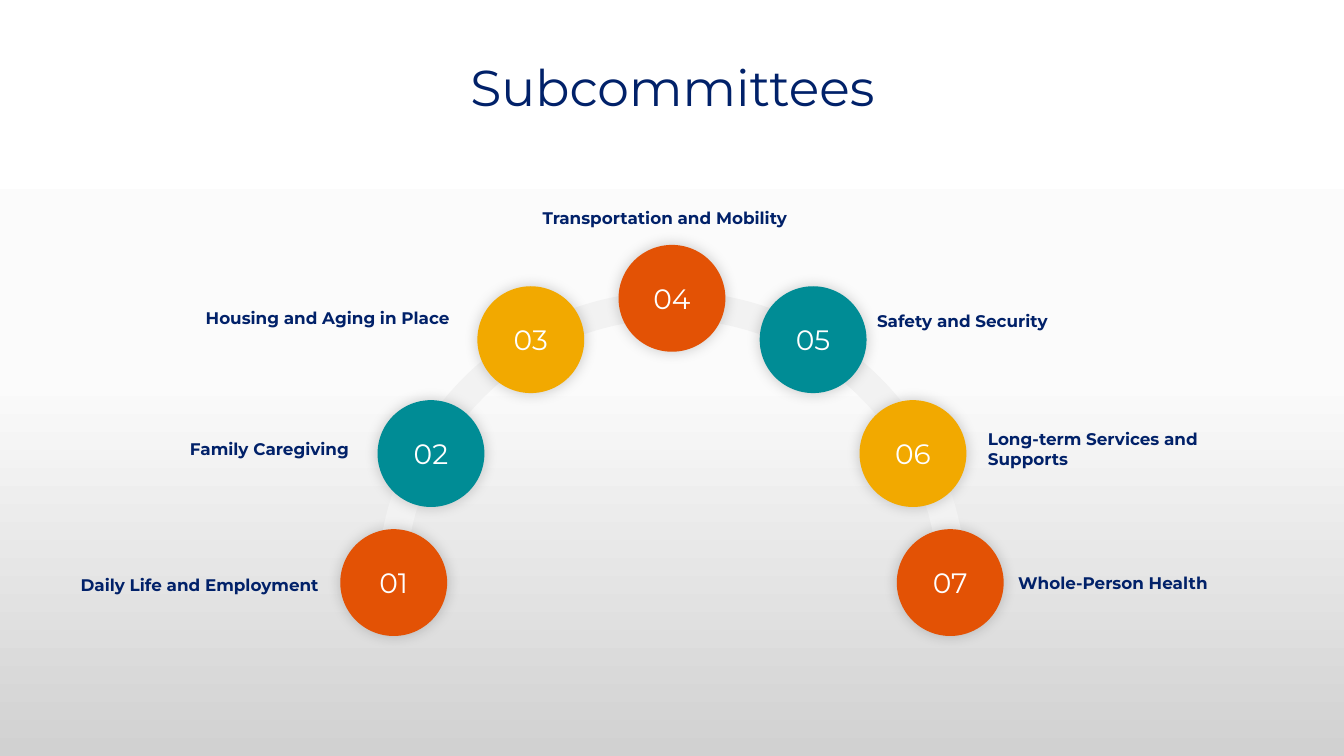
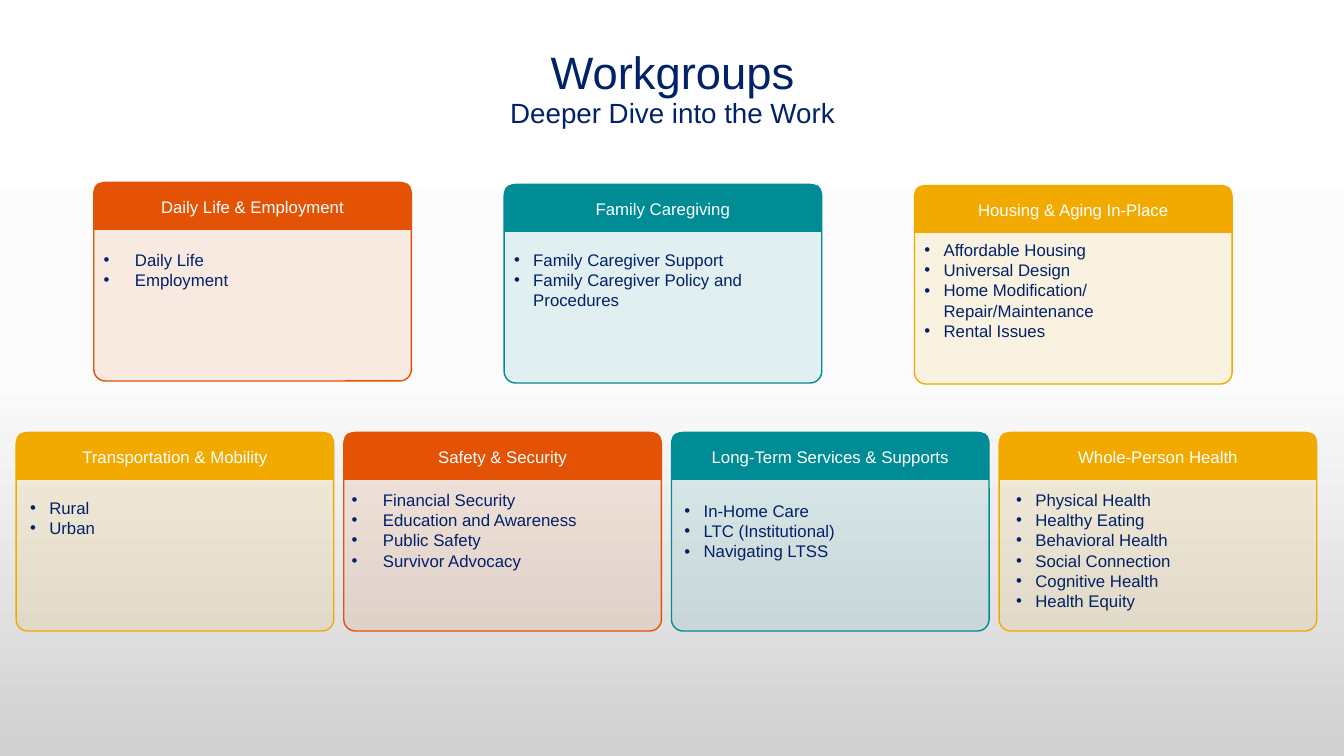
from copy import deepcopy

from lxml import etree
from pptx import Presentation
from pptx.dml.color import RGBColor
from pptx.enum.shapes import MSO_SHAPE
from pptx.enum.text import MSO_ANCHOR, PP_ALIGN
from pptx.oxml.ns import qn
from pptx.util import Inches, Pt

# Shared look; lengths are columns and rows of a one-inch grid
COLUMNS, ROWS = 13.33, 7.5
MIDDLE = COLUMNS / 2
NAVY, WHITE, PALE = "012169", "FFFFFF", "F2F2F2"
ORANGE, TEAL, GOLD = "E35205", "008C95", "F2A900"
BACKDROP = [(0, WHITE), (0.5, "FBFBFB"), (1, "D1D1D1")]
DISPLAY_FONT, BODY_FONT = "Montserrat", "Arial"

# Arch of numbered discs: distance from the middle and top of each pair
DISC = 1.06
ARCH_STEPS = [(2.76, 5.25), (2.39, 3.97), (1.4, 2.84), (0, 2.43)]
ARCH_COLORS = [ORANGE, TEAL, GOLD, ORANGE, TEAL, GOLD, ORANGE]
RING, RING_TOP = 5.56, 3.03
LABEL_WIDTH = 2.71
LABELS = [
    ("Daily Life and Employment", 0.55, 5.65, PP_ALIGN.RIGHT),
    ("Family Caregiving", 0.85, 4.3, PP_ALIGN.RIGHT),
    ("Housing and Aging in Place", 1.85, 3, PP_ALIGN.RIGHT),
    ("Transportation and Mobility", 5.24, 2.01, PP_ALIGN.CENTER),
    ("Safety and Security", 8.6, 3.03, PP_ALIGN.LEFT),
    ("Long-term Services and Supports", 9.7, 4.2, PP_ALIGN.LEFT),
    ("Whole-Person Health", 10, 5.63, PP_ALIGN.LEFT),
]

# Cards: heading, colour, top, list shift (right, down), hanging indent, items
CARD_WIDTH, CARD_HEIGHT, HEADER_HEIGHT = 3.15, 1.97, 0.47
UPPER_CARDS = [
    ("Daily Life & Employment", ORANGE, 1.81, (0, 0.62), 0.31,
     ["Daily Life", "Employment"]),
    ("Family Caregiving", TEAL, 1.83, (0, 0.6), 0.19,
     ["Family Caregiver Support", "Family Caregiver Policy and Procedures"]),
    ("Housing & Aging In-Place", GOLD, 1.84, (0, 0.49), 0.19,
     ["Affordable Housing", "Universal Design",
      "Home Modification/ Repair/Maintenance", "Rental Issues"]),
]
LOWER_CARDS = [
    ("Transportation & Mobility", GOLD, 4.29, (0.04, 0.6), 0.19,
     ["Rural", "Urban"]),
    ("Safety & Security", ORANGE, 4.29, (-0.02, 0.52), 0.31,
     ["Financial Security", "Education and Awareness", "Public Safety",
      "Survivor Advocacy"]),
    ("Long-Term Services & Supports", TEAL, 4.29, (0.03, 0.63), 0.19,
     ["In-Home Care", "LTC (Institutional)", "Navigating LTSS"]),
    ("Whole-Person Health", GOLD, 4.29, (0.07, 0.52), 0.19,
     ["Physical Health", "Healthy Eating", "Behavioral Health",
      "Social Connection", "Cognitive Health", "Health Equity"]),
]
CARD_ROWS = [(0.93, 4.07, UPPER_CARDS), (0.16, 3.25, LOWER_CARDS)]


def paint(target, color):
    """Give a fill one solid colour."""
    target.solid()
    target.fore_color.rgb = RGBColor.from_string(color)


def add_alpha(color_node, percent):
    etree.SubElement(color_node, qn("a:alpha"), val=str(percent * 1000))


def grid_box(left, top, width, height):
    return [Inches(length) for length in (left, top, width, height)]


def paint_backdrop(deck):
    """Set the gradient that all slides inherit."""
    master = deck.slide_master
    fill = master.background.fill
    fill.gradient()
    fill.gradient_angle = 270
    first_stop = master.element.xpath("./p:cSld/p:bg//a:gs")[0]
    first_stop.addnext(deepcopy(first_stop))
    for stop, (position, color) in zip(fill.gradient_stops, BACKDROP):
        stop.position = position
        stop.color.rgb = RGBColor.from_string(color)


# Text
def style_span(span, size, color, font, bold=False):
    span.font.size = Pt(size)
    span.font.name = font
    span.font.bold = bold
    paint(span.font.fill, color)


def write(shape, text, size, color, font, align, bold=False):
    frame = shape.text_frame
    frame.word_wrap = True
    frame.text = text
    for para in frame.paragraphs:
        para.alignment = align
        for span in para.runs:
            style_span(span, size, color, font, bold)
    return frame


def add_text(page, place, *style, **options):
    box = page.shapes.add_textbox(*grid_box(*place))
    return write(box, *style, **options)


def add_title(page, text, sizes, font):
    frame = add_text(page, (0.92, 0.41, 11.5, 0.97), text, sizes[0], NAVY,
                     font, PP_ALIGN.CENTER)
    frame.vertical_anchor = MSO_ANCHOR.MIDDLE
    para = frame.paragraphs[0]
    para.line_spacing = 0.9
    for span, size in zip(para.runs, sizes):
        span.font.size = Pt(size)


def add_bullets(page, place, items, indent):
    frame = add_text(page, place, "\n".join(items), 12, NAVY, BODY_FONT,
                     PP_ALIGN.LEFT)
    for para in frame.paragraphs:
        properties = para._p.get_or_add_pPr()
        properties.set("marL", str(Inches(indent)))
        properties.set("indent", str(-Inches(indent)))
        etree.SubElement(properties, qn("a:buFont"), typeface="Arial")
        etree.SubElement(properties, qn("a:buChar"), char="•")


# Shapes
def add_shape(page, kind, place, fill=None, line=None, line_width=1):
    shape = page.shapes.add_shape(kind, *grid_box(*place))
    shape.shadow.inherit = False
    if fill:
        paint(shape.fill, fill)
    else:
        shape.fill.background()
    if line:
        paint(shape.line.fill, line)
        shape.line.width = Pt(line_width)
    else:
        shape.line.fill.background()
    return shape


def add_glow_shadow(shape):
    effects = shape._element.spPr.find(qn("a:effectLst"))
    shadow = etree.SubElement(effects, qn("a:outerShdw"),
                              blurRad=str(Pt(10)), dist="0", dir="0",
                              algn="ctr", rotWithShape="0")
    add_alpha(etree.SubElement(shadow, qn("a:srgbClr"), val="000000"), 20)


def add_disc(page, number, center, top, color):
    disc = add_shape(page, MSO_SHAPE.OVAL,
                     (center - DISC / 2, top, DISC, DISC), color)
    add_glow_shadow(disc)
    frame = write(disc, f"{number:02}", 20, WHITE, DISPLAY_FONT,
                  PP_ALIGN.CENTER)
    frame.vertical_anchor = MSO_ANCHOR.MIDDLE


def add_card(page, left, heading, color, top, shift, indent, items):
    body = add_shape(page, MSO_SHAPE.ROUNDED_RECTANGLE,
                     (left, top, CARD_WIDTH, CARD_HEIGHT), color, color)
    body.adjustments[0] = 0.058
    add_alpha(body._element.spPr.find(qn("a:solidFill"))[0], 10)
    header = add_shape(page, MSO_SHAPE.ROUND_2_SAME_RECTANGLE,
                       (left, top, CARD_WIDTH, HEADER_HEIGHT), color)
    frame = write(header, heading, 12, WHITE, BODY_FONT, PP_ALIGN.CENTER)
    frame.vertical_anchor = MSO_ANCHOR.MIDDLE
    frame.margin_left = frame.margin_right = Inches(0.2)
    right, down = shift
    add_bullets(page, (left + right, top + down, CARD_WIDTH - right,
                       CARD_HEIGHT - down), items, indent)


# Slides
def build_subcommittees(page):
    add_title(page, "Subcommittees", [36], DISPLAY_FONT)
    ring = add_shape(page, MSO_SHAPE.ARC,
                     (MIDDLE - RING / 2, RING_TOP, RING, RING),
                     line=PALE, line_width=20)
    ring.adjustments[0] = 109
    ring.adjustments[1] = 0
    left_half = [(MIDDLE - reach, top) for reach, top in ARCH_STEPS]
    right_half = [(MIDDLE + reach, top) for reach, top in ARCH_STEPS[-2::-1]]
    discs = zip(left_half + right_half, ARCH_COLORS)
    for number, ((center, top), color) in enumerate(discs, 1):
        add_disc(page, number, center, top, color)
    for text, left, top, align in LABELS:
        add_text(page, (left, top, LABEL_WIDTH, 0.3), text, 12, NAVY,
                 DISPLAY_FONT, align, bold=True)


def build_workgroups(page):
    add_title(page, "Workgroups\vDeeper Dive into the Work", [32.4, 19.8],
              BODY_FONT)
    for start, pitch, cards in CARD_ROWS:
        for column, card in enumerate(cards):
            add_card(page, start + column * pitch, *card)


def main():
    deck = Presentation()
    deck.slide_width, deck.slide_height = Inches(COLUMNS), Inches(ROWS)
    paint_backdrop(deck)
    blank = deck.slide_layouts[6]
    for build in (build_subcommittees, build_workgroups):
        build(deck.slides.add_slide(blank))
    deck.save("out.pptx")


if __name__ == "__main__":
    main()
